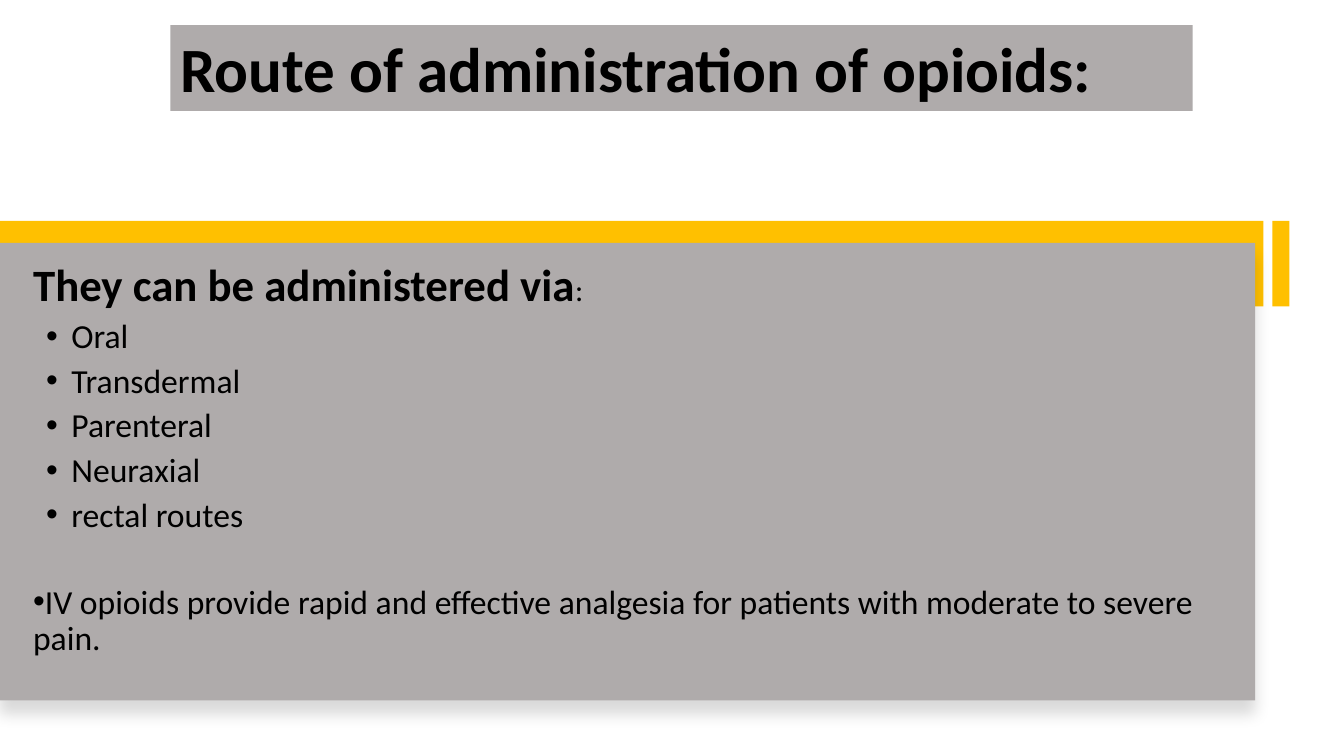
import pptx
import pptx.dml.color
import pptx.enum.shapes
import pptx.enum.text
import pptx.oxml
import pptx.oxml.ns
import pptx.util
from pptx.util import Inches

GREY, AMBER, BLACK = "AFABAB", "FFC000", "000000"
ANCHOR = pptx.enum.text.MSO_ANCHOR
ROUTES = ["Oral", "Transdermal", "Parenteral", "Neuraxial", "rectal routes"]
IV_NOTE = ("IV opioids provide rapid and effective analgesia for patients "
           "with moderate to severe pain.")


def color(hex_code):
    return pptx.dml.color.RGBColor.from_string(hex_code)


def add_panel(slide, left, top, width, height, fill):
    panel = slide.shapes.add_shape(
        pptx.enum.shapes.MSO_SHAPE.RECTANGLE,
        Inches(left), Inches(top), Inches(width), Inches(height))
    panel.shadow.inherit = False
    panel.fill.solid()
    panel.fill.fore_color.rgb = color(fill)
    panel.line.fill.background()
    return panel


def add_soft_shadow(panel):
    effects = panel._element.spPr.find(pptx.oxml.ns.qn("a:effectLst"))
    effects.append(pptx.oxml.parse_xml(
        f'<a:outerShdw {pptx.oxml.ns.nsdecls("a")} blurRad="{pptx.util.Pt(11)}" '
        f'dist="{pptx.util.Pt(10)}" dir="5400000" algn="t" rotWithShape="0">'
        f'<a:srgbClr val="{BLACK}"><a:alpha val="15000"/></a:srgbClr>'
        '</a:outerShdw>'))


def style_run(run, size, bold=False):
    run.font.name = "Calibri"
    run.font.size = pptx.util.Pt(size)
    run.font.bold = bold
    run.font.color.rgb = color(BLACK)


def add_bullet(paragraph, margin, indent):
    properties = paragraph._p.get_or_add_pPr()
    properties.set("marL", str(Inches(margin)))
    properties.set("indent", str(Inches(indent)))
    namespace = pptx.oxml.ns.nsdecls("a")
    for xml in (f'<a:buClr {namespace}><a:srgbClr val="{BLACK}"/></a:buClr>',
                f'<a:buFont {namespace} typeface="Arial"/>',
                f'<a:buChar {namespace} char="•"/>'):
        properties.append(pptx.oxml.parse_xml(xml))


def add_bullet_line(frame, text, margin, indent, space_before):
    line = frame.add_paragraph()
    line.text = text
    add_bullet(line, margin, indent)
    line.line_spacing = 0.9
    line.space_before = pptx.util.Pt(space_before)
    style_run(line.runs[0], 24)


def add_title(slide):
    title = add_panel(slide, 1.69, 0.25, 10.14, 0.85, GREY)
    frame = title.text_frame
    frame.word_wrap = True
    frame.vertical_anchor = ANCHOR.BOTTOM
    frame.text = "Route of administration of opioids:"
    heading = frame.paragraphs[0]
    heading.alignment = pptx.enum.text.PP_ALIGN.LEFT
    heading.line_spacing = 0.9
    style_run(heading.runs[0], 45, bold=True)


def add_routes(slide):
    body = slide.shapes.add_textbox(
        Inches(0.23), Inches(3.04), Inches(11.99), Inches(3.47))
    frame = body.text_frame
    frame.word_wrap = True
    frame.vertical_anchor = ANCHOR.MIDDLE
    frame.margin_bottom = Inches(0.47)

    frame.text = "They can be administered via"
    lead = frame.paragraphs[0]
    lead.line_spacing = 0.9
    style_run(lead.runs[0], 32, bold=True)
    colon = lead.add_run()
    colon.text = ":"
    style_run(colon, 22)

    for route in ROUTES:
        add_bullet_line(frame, route, 0.38, -0.25, 6)
    add_bullet_line(frame, IV_NOTE, 0, 0, 36)


def main():
    deck = pptx.Presentation()
    deck.slide_width, deck.slide_height = Inches(13.33), Inches(7.5)
    slide = deck.slides.add_slide(deck.slide_layouts[6])

    add_title(slide)

    # Amber band with its detached end strip
    add_panel(slide, 12.62, 2.19, 0.17, 0.85, AMBER)
    add_panel(slide, 0, 2.19, 12.53, 0.85, AMBER)

    # Content panel and its text
    add_soft_shadow(add_panel(slide, 0, 2.41, 12.45, 4.54, GREY))
    add_routes(slide)

    deck.save("out.pptx")


if __name__ == "__main__":
    main()
